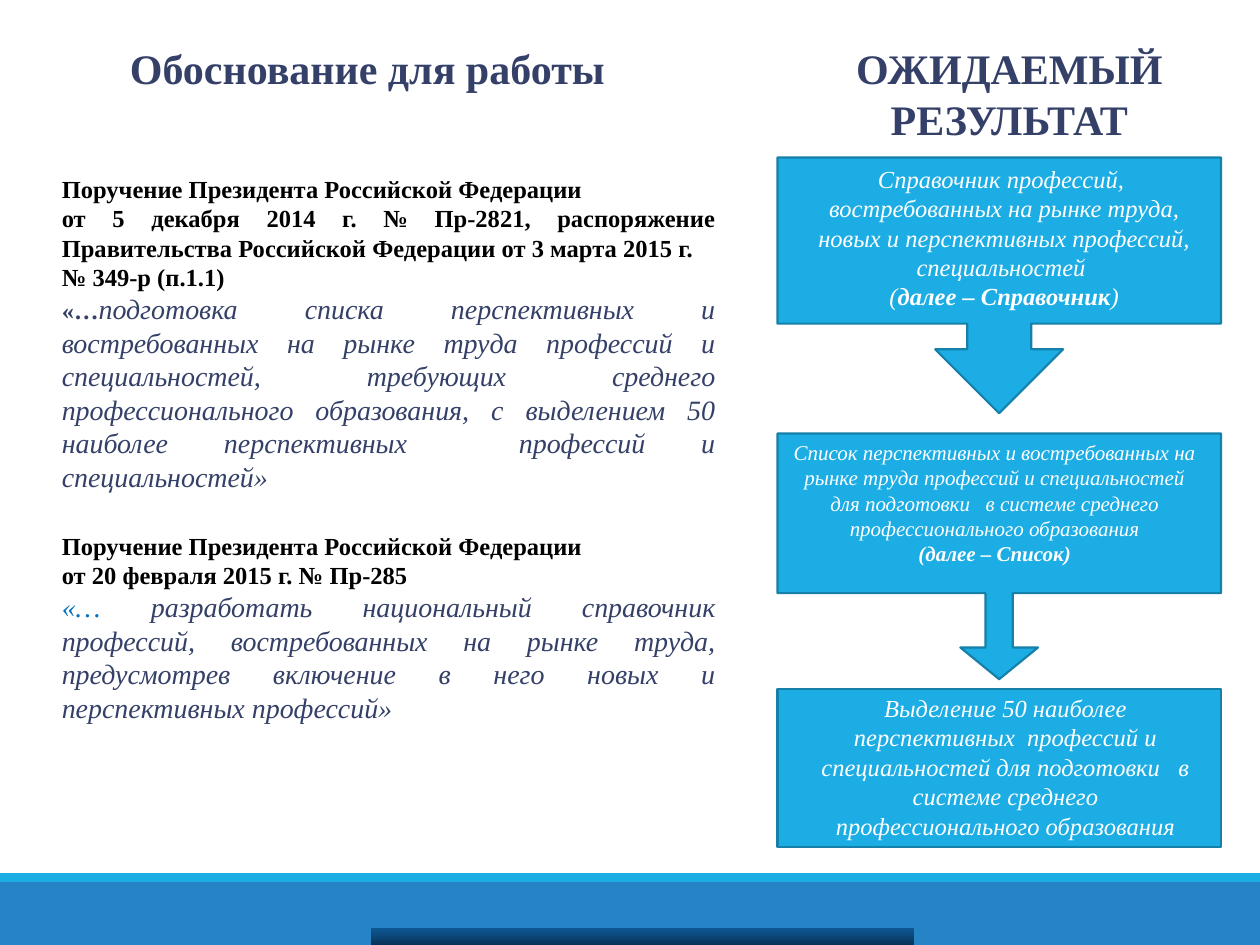
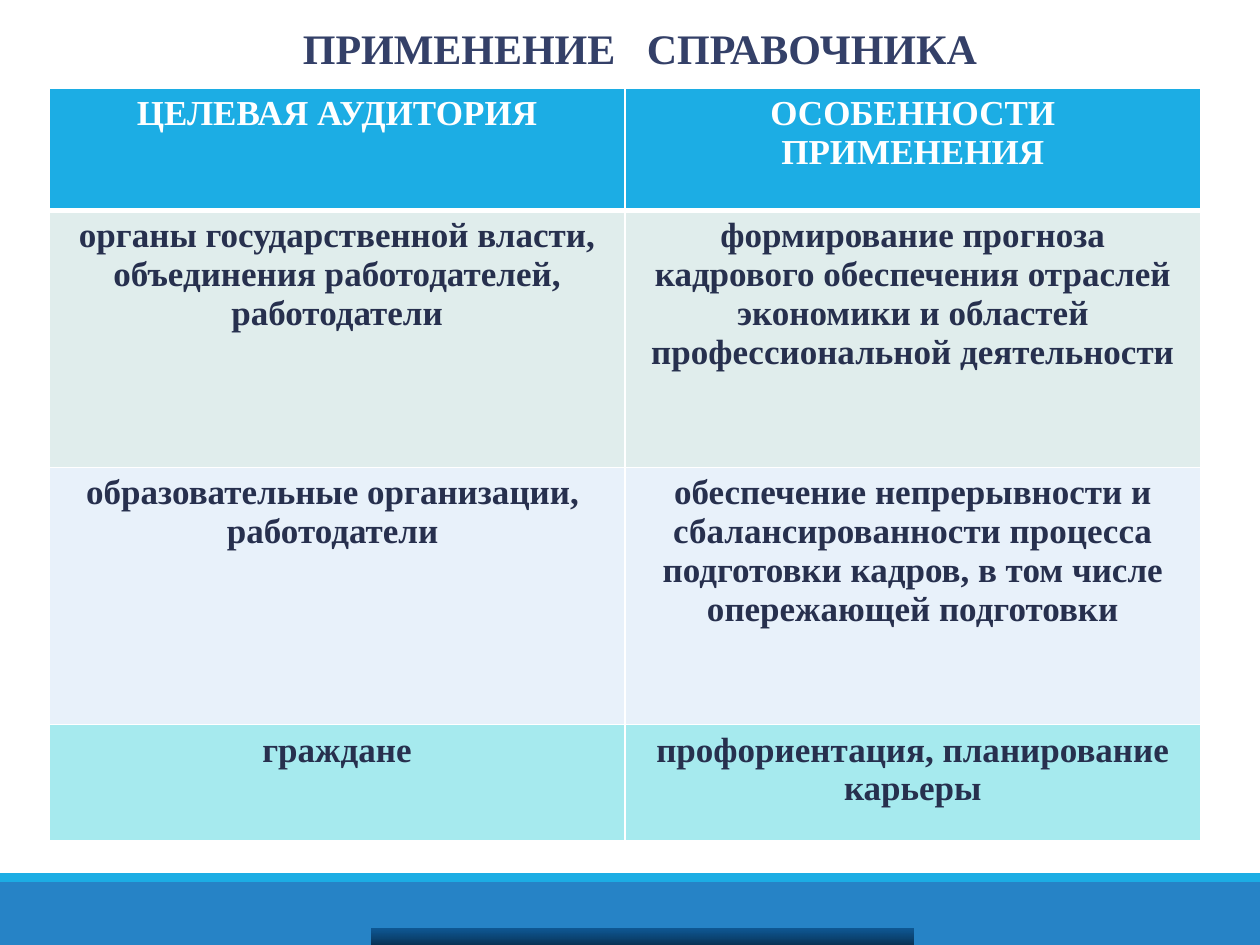
from lxml.etree import SubElement
from pptx import Presentation
from pptx.dml.color import RGBColor as RGB
from pptx.enum.shapes import MSO_SHAPE as Kind
from pptx.enum.text import MSO_ANCHOR as Anchor, MSO_AUTO_SIZE as Fit, PP_ALIGN as Align
from pptx.oxml.ns import qn
from pptx.util import Inches, Pt

FONT = "Times New Roman"
NAVY = RGB(0x34, 0x40, 0x68)
INK = RGB(0x27, 0x30, 0x4E)
BLACK = RGB(0, 0, 0)
WHITE = RGB(0xFF, 0xFF, 0xFF)
BLUE = RGB(0x00, 0x70, 0xC0)
SKY = RGB(0x1C, 0xAD, 0xE4)
EDGE = RGB(0x15, 0x80, 0xA9)
BAND = RGB(0x26, 0x83, 0xC6)
DUSK = RGB(0x00, 0x3C, 0x73)
NIGHT = RGB(0x00, 0x1C, 0x35)
ROWS = [SKY, RGB(0xE0, 0xED, 0xEC), RGB(0xE8, 0xF1, 0xFA), RGB(0xA6, 0xEA, 0xEE)]


def ink(run, size, tint, bold=False, slant=False):
    font = run.font
    font.name, font.size, font.bold, font.italic = FONT, Pt(size), bold, slant
    font.color.rgb = tint


def write(frame, text, size, tint, bold=False, slant=False, align=Align.CENTER):
    frame.word_wrap = True
    frame.auto_size = Fit.NONE
    frame.vertical_anchor = Anchor.TOP
    frame.text = text
    for par in frame.paragraphs:
        par.alignment = align
        par.line_spacing = 1.0
        par.space_before = Pt(0)
        for run in par.runs:
            ink(run, size, tint, bold, slant)


deck = Presentation()
deck.slide_width, deck.slide_height = Inches(10), Inches(7.5)
basis = deck.slides.add_slide(deck.slide_layouts[1])
usage = deck.slides.add_slide(deck.slide_layouts[5])

for top, high, tint in [(7, 0.5, BAND), (6.93, 0.07, SKY)]:
    band = basis.shapes.add_shape(Kind.RECTANGLE, 0, Inches(top), Inches(10), Inches(high))
    band.shadow.inherit = False
    band.fill.solid()
    band.fill.fore_color.rgb = tint
    band.line.fill.background()
    deck.slide_master.shapes.element.append(band.element)

heads = [
    (basis, "Обоснование для работы", 0.12, 0.29, 5.59),
    (usage, "ПРИМЕНЕНИЕ   СПРАВОЧНИКА", 1.22, 0.13, 7.72),
]
for slide, text, left, top, wide in heads:
    head = slide.shapes.title
    head.left, head.top, head.width, head.height = map(Inches, (left, top, wide, 0.5))
    write(head.text_frame, text, 24, NAVY, bold=True)

    strip = slide.shapes.add_shape(
        Kind.RECTANGLE, Inches(2.95), Inches(7.37), Inches(4.3), Inches(0.13))
    strip.shadow.inherit = False
    strip.line.fill.background()
    strip.fill.gradient()
    strip.fill.gradient_angle = 270
    for stop, tint in zip(strip.fill.gradient_stops, (DUSK, NIGHT)):
        stop.color.rgb = tint
    for node, alpha in zip(strip.element.spPr.iter(qn("a:srgbClr")), (60, 80)):
        SubElement(node, qn("a:alpha")).set("val", str(alpha * 1000))

goal = basis.shapes.add_textbox(Inches(6.02), Inches(0.29), Inches(3.98), Inches(0.91))
write(goal.text_frame, "ОЖИДАЕМЫЙ РЕЗУЛЬТАТ", 24, NAVY, bold=True)

body = basis.placeholders[1]
body.left, body.top, body.width, body.height = map(Inches, (0.39, 1.33, 5.39, 4.51))
orders = [
    "Поручение Президента Российской Федерации",
    "от 5 декабря 2014 г. № Пр-2821, распоряжение Правительства Российской Федерации "
    "от 3 марта 2015 г.",
    "№ 349-р (п.1.1)",
    "«…",
    "Поручение Президента Российской Федерации",
    "от 20 февраля 2015 г. № Пр-285",
    "«… ",
]
write(body.text_frame, "\n".join(orders), 14, BLACK, bold=True, align=Align.JUSTIFY)
pars = body.text_frame.paragraphs
for par in pars:
    props = par._p.get_or_add_pPr()
    props.set("marL", "0")
    props.set("indent", "0")
    SubElement(props, qn("a:buNone"))
pars[4].space_before = Pt(21.5)
ink(pars[3].runs[0], 14, NAVY, bold=True)
ink(pars[6].runs[0], 16, BLUE, slant=True)
quotes = {
    3: "подготовка списка перспективных и востребованных на рынке труда профессий и "
       "специальностей, требующих среднего профессионального образования, с выделением "
       "50 наиболее перспективных  профессий и специальностей»",
    6: "разработать национальный справочник профессий, востребованных на рынке труда, "
       "предусмотрев включение в него новых и перспективных профессий»",
}
for spot, text in quotes.items():
    run = pars[spot].add_run()
    run.text = text
    ink(run, 16, NAVY, slant=True)

CALL = Kind.DOWN_ARROW_CALLOUT
steps = [
    (CALL, 1.25, 2.03, [], 6.33, 3.28, 14,
     "Справочник профессий, \nвостребованных на рынке труда, новых и перспективных профессий,\n"
     "специальностей \n("),
    (CALL, 3.44, 1.95, [0.111, 0.158, 0.129, 0.65], 6.18, 3.43, 12,
     "Список перспективных и востребованных на рынке труда профессий и специальностей "
     "для подготовки   в системе среднего профессионального образования\n(далее – Список)"),
    (Kind.RECTANGLE, 5.47, 1.25, [], 6.34, 3.28, 14,
     "Выделение 50 наиболее перспективных  профессий и специальностей для подготовки   "
     "в системе среднего профессионального образования"),
]
notes = []
for kind, top, high, bends, left, wide, size, text in steps:
    step = basis.shapes.add_shape(kind, Inches(6.17), Inches(top), Inches(3.52), Inches(high))
    step.shadow.inherit = False
    step.fill.solid()
    step.fill.fore_color.rgb = SKY
    step.line.color.rgb = EDGE
    step.line.width = Pt(1.25)
    for spot, bend in enumerate(bends):
        step.adjustments[spot] = bend
    note = basis.shapes.add_textbox(Inches(left), Inches(top), Inches(wide), Inches(1.25))
    write(note.text_frame, text, size, WHITE, slant=True)
    notes.append(note.text_frame)

notes[2].margin_top = Inches(0.03)
for text, bold in [("далее – Справочник", True), (")", False)]:
    run = notes[0].paragraphs[-1].add_run()
    run.text = text
    ink(run, 14, WHITE, bold, slant=True)
notes[1].paragraphs[-1].runs[0].font.bold = True

cells = [
    ("ЦЕЛЕВАЯ АУДИТОРИЯ", "ОСОБЕННОСТИ ПРИМЕНЕНИЯ"),
    ("органы государственной власти, объединения работодателей, работодатели",
     "формирование прогноза кадрового обеспечения отраслей экономики и областей "
     "профессиональной деятельности"),
    ("образовательные организации,  работодатели ",
     "обеспечение непрерывности и сбалансированности процесса подготовки кадров, "
     "в том числе опережающей подготовки"),
    ("граждане", "профориентация, планирование карьеры"),
]
grid = usage.shapes.add_table(
    4, 2, Inches(0.39), Inches(0.7), Inches(9.14), Inches(5.97)).table
for row, high in zip(grid.rows, (0.97, 2.04, 2.04, 0.92)):
    row.height = Inches(high)
for r, texts in enumerate(cells):
    for c, text in enumerate(texts):
        cell = grid.cell(r, c)
        write(cell.text_frame, text, 20, INK if r else WHITE, bold=True)
        cell.fill.solid()
        cell.fill.fore_color.rgb = ROWS[r]
        props = cell._tc.get_or_add_tcPr()
        for spot, side in enumerate(("lnL", "lnR", "lnT", "lnB")):
            thick = (side == "lnB" and r == 0) or (side == "lnT" and r == 1)
            line = SubElement(props, qn("a:" + side), w=str(Pt(3 if thick else 1)))
            fill = SubElement(line, qn("a:solidFill"))
            SubElement(fill, qn("a:srgbClr"), val=str(WHITE))
            props.insert(spot, line)

deck.save("out.pptx")
